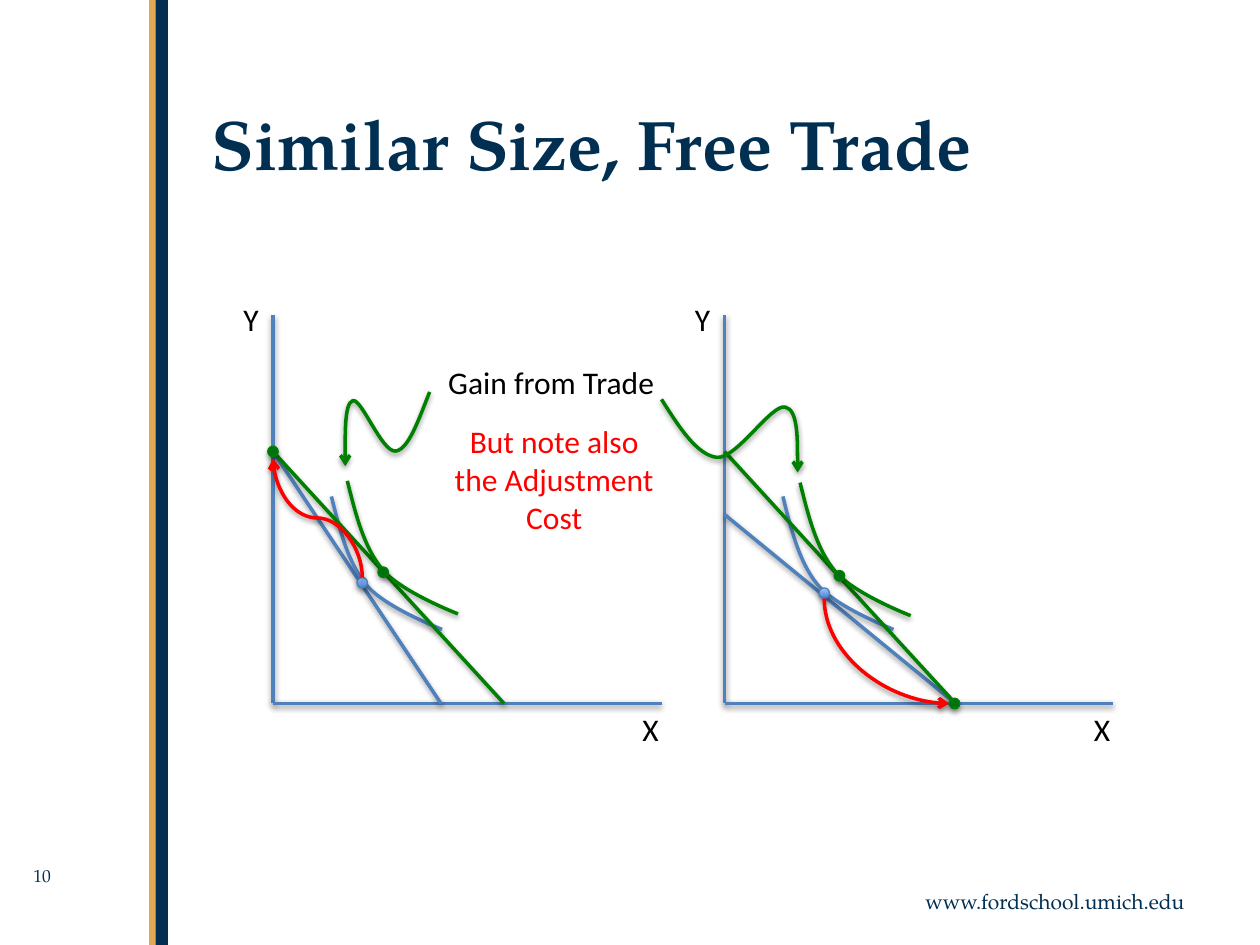
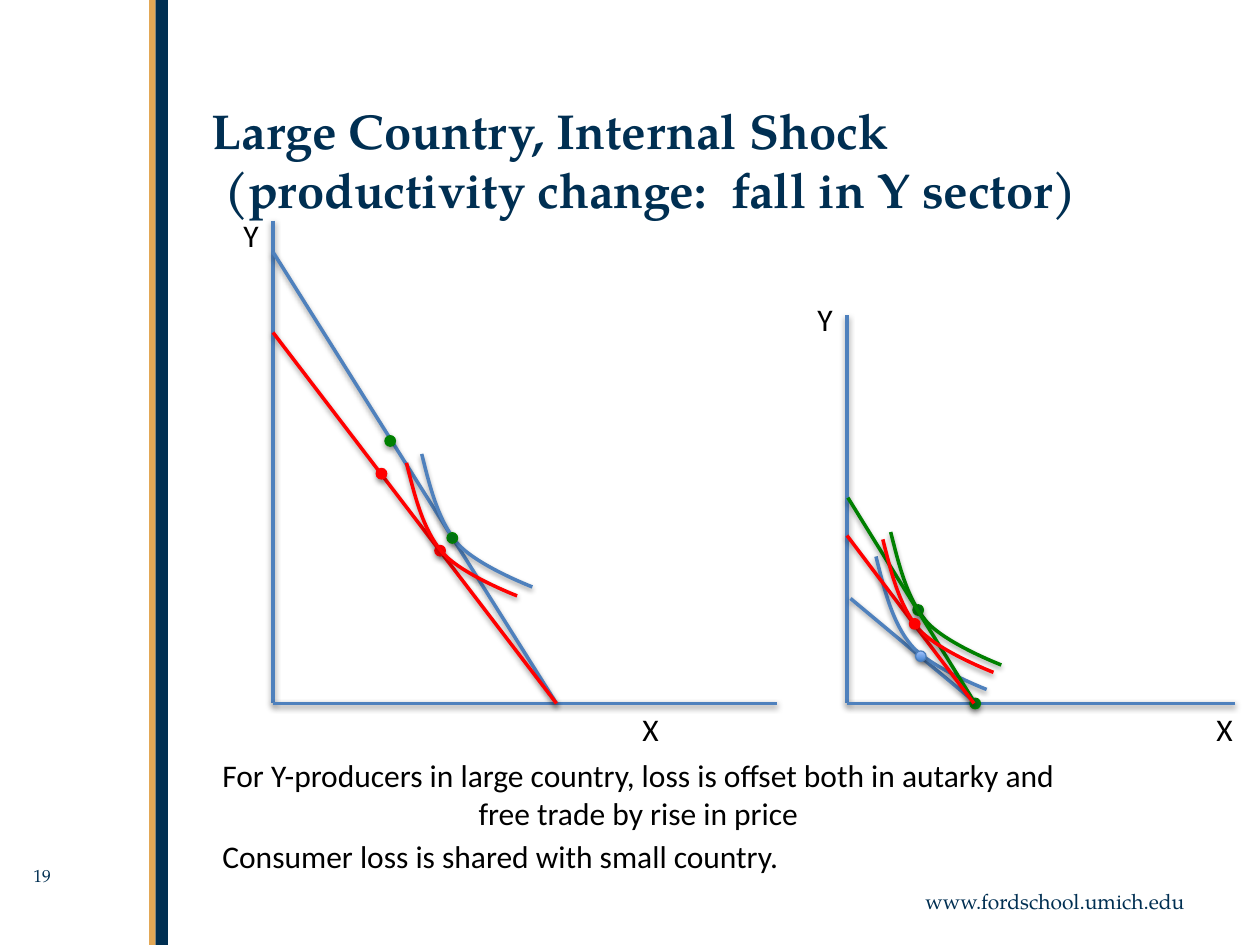
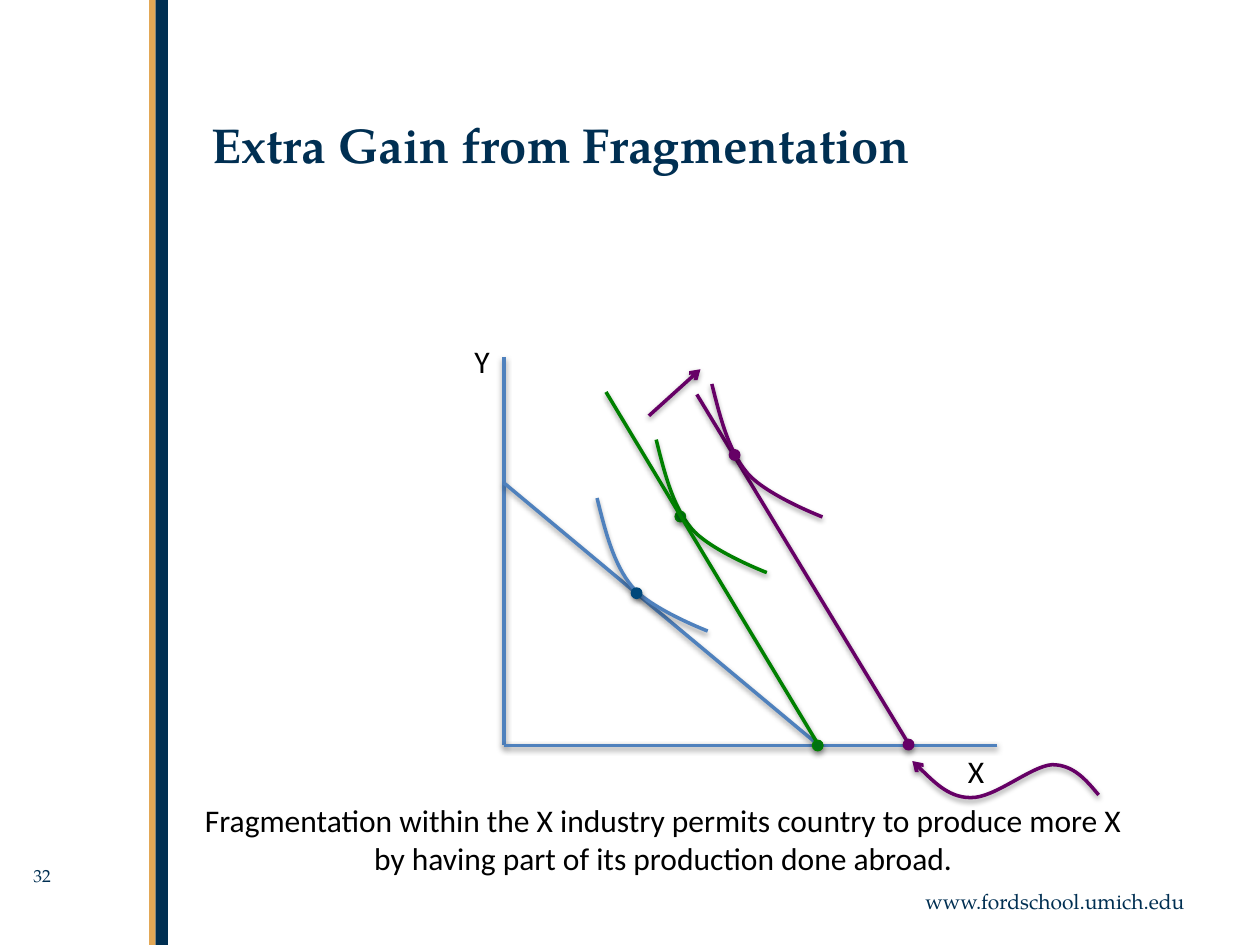
import dataclasses

import lxml.etree
import pptx
import pptx.dml.color
import pptx.enum.shapes
import pptx.enum.text
import pptx.oxml.ns
import pptx.util

qn = pptx.oxml.ns.qn
SHAPE = pptx.enum.shapes.MSO_SHAPE
LINK = pptx.enum.shapes.MSO_CONNECTOR
ALIGN = pptx.enum.text.PP_ALIGN


@dataclasses.dataclass(frozen=True)
class Theme:
    navy: str = "002F52"
    gold: str = "E3A856"
    black: str = "000000"
    blue: str = "4F81BD"
    green: str = "008000"
    leaf: str = "007212"
    red: str = "FF0000"
    plum: str = "660066"
    deep: str = "00487B"
    rim: str = "4B7EBC"
    glow: tuple = ("3F80CE", "A4C4FF")
    serif: str = "TeX Gyre Pagella"
    sans: str = "Calibri"
    large: float = 40
    head: float = 28
    body: float = 18
    foot: float = 12
    page: float = 10
    stroke: float = 2
    edge: float = 0.75
    dot: float = 6


T = Theme()

# Indifference curve: Bezier points right of and below its start
BEND = [(0, 0), (4.7, 18.9), (9.4, 37.8), (20, 50.6),
        (30.5, 63.4), (63.2, 76), (63.2, 76)]


def pts(*nums):
    return [pptx.util.Pt(n) for n in nums]


def rgb(code):
    return pptx.dml.color.RGBColor.from_string(code)


def text(slide, box, words, size=T.body, color=T.black, font=T.sans,
         align=ALIGN.LEFT, bold=False):
    frame = slide.shapes.add_textbox(*pts(*box)).text_frame
    frame.word_wrap = True
    para = frame.paragraphs[0]
    para.text = words
    para.alignment = align
    for run in para.runs:
        run.font.name = font
        run.font.size = pptx.util.Pt(size)
        run.font.bold = bold
        run.font.color.rgb = rgb(color)


def ink(shape, color, width=T.stroke, arrow=False, alpha=38, drop=20000):
    """Give a shape its line, optional arrowhead and soft shadow."""
    shape.line.color.rgb = rgb(color)
    shape.line.width = pptx.util.Pt(width)
    props = shape.element.spPr
    if arrow:
        lxml.etree.SubElement(props.find(qn("a:ln")), qn("a:tailEnd"), type="arrow")
    effect = lxml.etree.SubElement(props, qn("a:effectLst"))
    shade = lxml.etree.SubElement(effect, qn("a:outerShdw"), blurRad="40000",
                                  dist=str(drop), dir="5400000", rotWithShape="0")
    tint = lxml.etree.SubElement(shade, qn("a:srgbClr"), val=T.black)
    lxml.etree.SubElement(tint, qn("a:alpha"), val=str(alpha * 1000))


class Plot:
    """Axes in a box; points count right and up from the origin."""

    def __init__(self, slide, box, xgap=18, ygap=12):
        self.slide = slide
        left, top, width, height = box
        self.left, self.base = left, top + height
        self.line(T.blue, (0, height), (0, 0))
        self.line(T.blue, (width, 0), (0, 0))
        text(slide, (left + width - xgap, self.base, 30, 29), "X")
        text(slide, (left - 24, top - ygap, 30, 29), "Y")

    def spot(self, point):
        return self.left + point[0], self.base - point[1]

    def line(self, color, start, end, arrow=False):
        link = self.slide.shapes.add_connector(
            LINK.STRAIGHT, *pts(*self.spot(start), *self.spot(end)))
        ink(link, color, arrow=arrow)

    def curve(self, color, points, arrow=False):
        """Draw a chain of cubic Beziers through start, control and end points."""
        first, *rest = [pts(*self.spot(p)) for p in points]
        build = self.slide.shapes.build_freeform(*first)
        build.add_line_segments(rest, close=False)
        shape = build.convert_to_shape()
        path = shape.element.find(".//" + qn("a:path"))
        steps = path.findall(qn("a:lnTo"))
        for i in range(0, len(steps), 3):
            cubic = lxml.etree.SubElement(path, qn("a:cubicBezTo"))
            for step in steps[i:i + 3]:
                cubic.append(step[0])
                path.remove(step)
        shape.fill.background()
        ink(shape, color, arrow=arrow)

    def bend(self, color, x, y):
        self.curve(color, [(x + dx, y - dy) for dx, dy in BEND])

    def arc(self, start, end, kind):
        """Curved arrow leaving upright: a connector turned by 270 degrees."""
        (ax, ay), (bx, by) = self.spot(start), self.spot(end)
        mx, my = (ax + bx) / 2, (ay + by) / 2
        link = self.slide.shapes.add_connector(
            LINK.CURVE, *pts(mx - ay + my, my + ax - mx, mx - by + my, my + bx - mx))
        props = link.element.spPr
        props.find(qn("a:xfrm")).set("rot", str(270 * 60000))
        props.find(qn("a:prstGeom")).set("prst", kind)
        ink(link, T.red, arrow=True)

    def dot(self, point, fill=None, edge=None):
        x, y = self.spot(point)
        r = T.dot / 2
        shape = self.slide.shapes.add_shape(
            SHAPE.OVAL, *pts(x - r, y - r, T.dot, T.dot))
        if fill:
            shape.fill.solid()
            shape.fill.fore_color.rgb = rgb(fill)
        else:
            shape.fill.gradient()
            shape.fill.gradient_angle = 90
            for stop, code in zip(shape.fill.gradient_stops, T.glow):
                stop.color.rgb = rgb(code)
        ink(shape, edge or fill or T.rim, T.edge, alpha=35, drop=23000)

    def leaf(self, *points):
        for point in points:
            self.dot(point, T.leaf, T.green)


def base(deck, title, page, size=T.head, top=54):
    """Start a slide with bands, title, page number and footer."""
    slide = deck.slides.add_slide(deck.slide_layouts[6])
    for left, width, color in ((88.8, 7.2, T.navy), (85.2, 3.6, T.gold)):
        band = slide.shapes.add_shape(SHAPE.RECTANGLE, *pts(left, 0, width, 540))
        band.shadow.inherit = False
        band.fill.solid()
        band.fill.fore_color.rgb = rgb(color)
        band.line.fill.background()
    text(slide, (504, 504, 180, 22), "www.fordschool.umich.edu",
         T.foot, T.navy, T.serif, ALIGN.RIGHT)
    text(slide, (12, 490.5, 66, 24), page, T.page, T.navy, T.serif)
    text(slide, (114, top, 570, 88.5), title, size, T.navy, T.serif, bold=True)
    return slide


def trade(deck):
    slide = base(deck, "Similar Size, Free Trade", "10", T.large)

    # Country on the left
    home = Plot(slide, (156, 180, 222, 222))
    home.line(T.blue, (96, 0), (0, 144))
    home.bend(T.blue, 33.4, 118.3)
    home.line(T.green, (132, 0), (0, 144))
    home.bend(T.green, 42.5, 127.2)
    home.dot((51, 69))
    home.leaf((63, 75), (0, 144))
    home.curve(T.green, [(89.5, 178), (83, 161.5), (77.3, 145), (70, 144.2),
                         (62.2, 143.5), (50.6, 174.5), (45.6, 173),
                         (40.6, 171.6), (41.3, 135.6), (41.3, 135.6)], arrow=True)
    home.arc((51, 72), (0, 140), "curvedConnector3")

    # Country on the right
    away = Plot(slide, (414, 180, 222, 222))
    away.line(T.blue, (132, 0), (0, 108))
    away.bend(T.blue, 33.4, 118.3)
    away.line(T.green, (132, 0), (0, 144))
    away.bend(T.green, 43.2, 126.2)
    away.dot((57, 63))
    away.leaf((65.7, 73), (131.5, 0))
    away.curve(T.green, [(-36, 173.8), (-26, 158), (-15.8, 142), (-4.3, 140.6),
                         (7.2, 140), (26.6, 171), (34.6, 169.4),
                         (42.5, 168), (41.8, 132), (41.8, 132)], arrow=True)
    away.arc((57, 60), (128.5, 0), "curvedConnector2")

    # Remarks between the countries
    text(slide, (246, 204, 138, 29), "Gain from Trade", align=ALIGN.CENTER)
    text(slide, (247.7, 237.6, 138, 73), "But note also the Adjustment Cost",
         color=T.red, align=ALIGN.CENTER)


def shock(deck):
    slide = base(deck, "Large Country, Internal Shock\v"
                 " (productivity change:  fall in Y sector)", "19")

    # Large country
    large = Plot(slide, (156, 126, 288, 276), xgap=84, ygap=6)
    large.line(T.blue, (162, 0), (0, 258))
    large.bend(T.blue, 85, 142.6)
    large.leaf((102.5, 94.6))
    large.dot((67, 150), T.green)
    large.line(T.red, (162, 0), (0, 212))
    large.dot((95.5, 87.3), T.red)
    large.bend(T.red, 76.3, 137.5)
    large.dot((62, 131.3), T.red)

    # Small country
    small = Plot(slide, (484, 180, 222, 222))
    small.line(T.blue, (74, 0), (2, 60))
    small.bend(T.blue, 16.6, 84)
    small.bend(T.green, 25, 98)
    small.dot((42.2, 27))
    small.leaf((40.7, 53.4))
    small.line(T.green, (73.3, 0), (0.5, 117.6))
    small.leaf((73.3, 0))
    small.line(T.red, (72.6, 0), (0, 96))
    small.bend(T.red, 20.5, 93.8)
    small.dot((38.7, 45.5), T.red)

    # Remarks
    text(slide, (120, 474.5, 505, 29), "Consumer loss is shared with small country.")
    text(slide, (112.3, 428.4, 505, 51),
         "For Y-producers in large country, loss is offset both in autarky "
         "and free trade by rise in price", align=ALIGN.CENTER)


def extra(deck):
    slide = base(deck, "Extra Gain from Fragmentation", "32", top=62)

    # Budget lines, indifference curves and their points
    plot = Plot(slide, (288, 204, 282, 222), xgap=24)
    plot.line(T.blue, (180, 0), (0, 150))
    plot.bend(T.green, 87, 174.8)
    plot.leaf((100.8, 130.8))
    plot.line(T.green, (179.3, 1), (58.3, 202))
    plot.leaf((179.3, 0))
    plot.bend(T.blue, 53.2, 141.4)
    plot.line(T.plum, (231.8, 0), (110.2, 200.6))
    plot.bend(T.plum, 118.8, 206.6)
    plot.dot((131.8, 166), T.plum)
    plot.dot((231.2, 0.5), T.plum)
    plot.dot((75.8, 87), T.deep)

    # Remark and arrows
    text(slide, (99.4, 454.3, 559.4, 51),
         "Fragmentation within the X industry permits country to produce more X "
         "by having part of its production done abroad.", align=ALIGN.CENTER)
    plot.curve(T.plum, [(339.8, -28.3), (332.6, -19.7), (325.4, -11), (313.2, -11),
                        (301, -11.8), (280, -30.5), (266.4, -29.8),
                        (253.4, -29.8), (233.3, -8.9), (233.3, -8.9)], arrow=True)
    plot.line(T.plum, (82.8, 188.4), (112.3, 215), arrow=True)


def main():
    deck = pptx.Presentation()
    deck.slide_width, deck.slide_height = pts(720, 540)
    trade(deck)
    shock(deck)
    extra(deck)
    deck.save("out.pptx")


if __name__ == "__main__":
    main()
